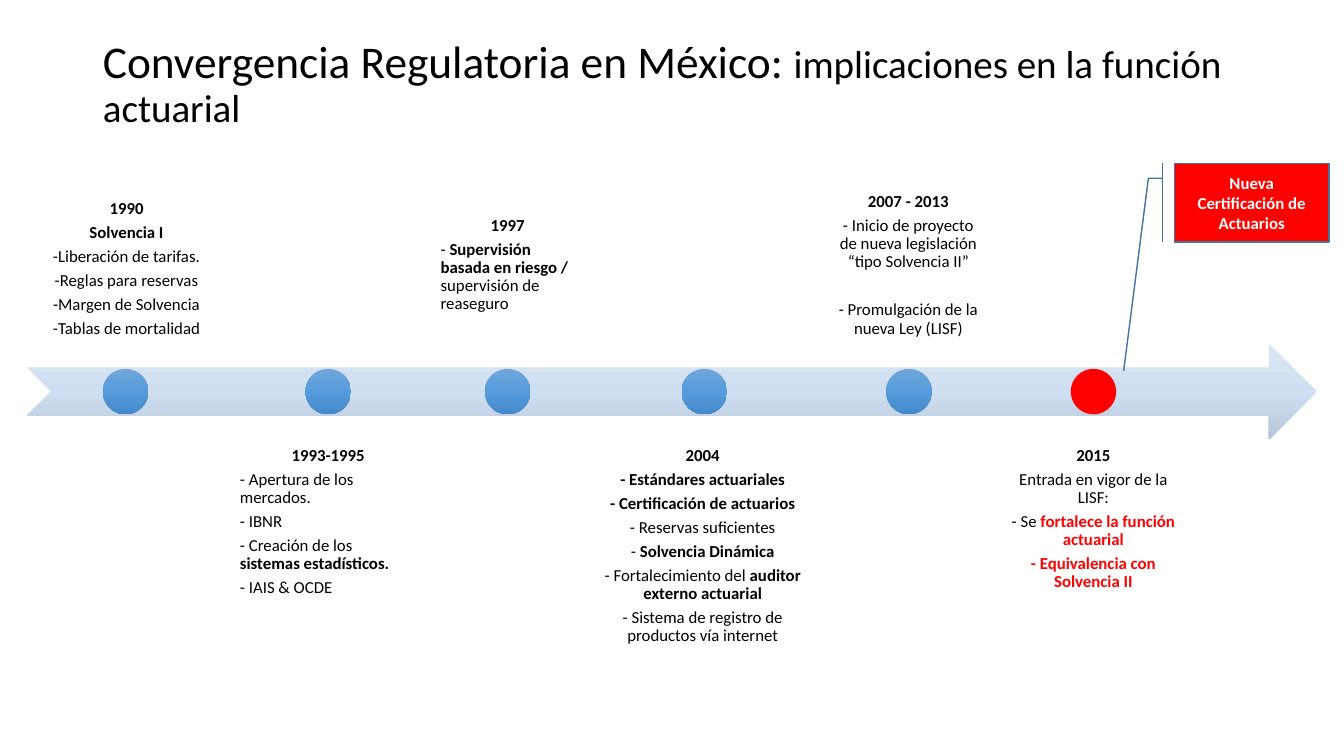
"""Build a timeline slide on regulatory convergence in Mexico."""
from copy import deepcopy
from typing import NamedTuple

from pptx import Presentation
from pptx.dml.color import RGBColor
from pptx.enum import shapes, text
from pptx.util import Inches, Pt

BLACK, WHITE, RED = "000000", "FFFFFF", "FF0000"
BAND = ("DBE5F3", "D0DEF1", "B6C5D9")
BLUE = ("71A6DB", "559BDB", "448ACA")
MID, LEFT = text.PP_ALIGN.CENTER, text.PP_ALIGN.LEFT
KIND = shapes.MSO_SHAPE


class Event(NamedTuple):
    left: float
    width: float
    dot: float
    above: bool
    year: str
    lines: tuple[str, ...]
    align: text.PP_ALIGN = MID
    fill: tuple[str, ...] = BLUE
    accent: str = BLACK
    base: float = 0.09
    gap: float = 0


EVENTS = (
    Event(0.28, 1.95, 1.02, True, "1990",
          ("|Solvencia I", "-Liberación de tarifas.", "-Reglas para reservas",
           "-Margen de Solvencia", "-Tablas de mortalidad")),
    Event(2.29, 1.93, 3.03, False, "1993-1995",
          ("- Apertura de los mercados.", "- IBNR",
           "- Creación de los |sistemas estadísticos.", "- IAIS & OCDE"), LEFT),
    Event(4.28, 1.51, 4.81, True, "1997",
          ("- |Supervisión basada en riesgo / |supervisión de reaseguro",),
          LEFT, base=0.33),
    Event(5.84, 2.26, 6.76, False, "2004",
          ("|- Estándares actuariales", "|- Certificación de actuarios",
           "- Reservas suficientes", "- |Solvencia Dinámica",
           "- Fortalecimiento del |auditor externo actuarial",
           "- Sistema de registro de productos vía internet")),
    Event(8.18, 1.66, 8.79, True, "2007 - 2013",
          ("- Inicio de proyecto de nueva legislación “tipo Solvencia II”",
           "- Promulgación de la nueva Ley (LISF)"), gap=17.2),
    Event(9.91, 1.87, 10.62, False, "2015",
          ("Entrada en vigor de la LISF:", "- Se |fortalece la función actuarial",
           "|- Equivalencia con Solvencia II"), fill=(RED,), accent=RED),
)


def tint(target, code: str) -> None:
    """Give a colour format a hex colour."""
    target.rgb = RGBColor.from_string(code)


def write(para, words: str, size: float, code: str, bold: bool = False) -> None:
    """Add one formatted run to a paragraph."""
    run = para.add_run()
    run.text = words
    run.font.name, run.font.size, run.font.bold = "Calibri", Pt(size), bold
    tint(run.font.color, code)


def paint(shape, codes: tuple[str, ...]) -> None:
    """Fill a shape with one colour or an even downward gradient."""
    shape.shadow.inherit = False
    if len(codes) == 1:
        shape.fill.solid()
        tint(shape.fill.fore_color, codes[0])
        return
    shape.fill.gradient()
    shape.fill.gradient_angle = 270
    stops = shape._element.spPr.find(".//{*}gsLst")
    stops.append(deepcopy(stops[-1]))
    for i, stop in enumerate(shape.fill.gradient_stops):
        stop.position = i / (len(codes) - 1)
        tint(stop.color, codes[i])


def draw(slide, kind, box: tuple[float, ...], codes: tuple[str, ...]):
    """Add a filled shape without outline."""
    shape = slide.shapes.add_shape(kind, *map(Inches, box))
    paint(shape, codes)
    shape.line.fill.background()
    return shape


def label(slide, event: Event) -> None:
    """Write an event's year and lines, with bold parts after each bar."""
    top = 1.62 if event.above else 4.34
    box = slide.shapes.add_textbox(
        *map(Inches, (event.left, top, event.width, 1.82)))
    frame = box.text_frame
    frame.word_wrap = True
    frame.vertical_anchor = (
        text.MSO_ANCHOR.BOTTOM if event.above else text.MSO_ANCHOR.TOP)
    frame.margin_left = frame.margin_right = frame.margin_top = Inches(0.09)
    frame.margin_bottom = Inches(event.base)
    for i, line in enumerate(("|" + event.year, *event.lines)):
        para = frame.add_paragraph() if i else frame.paragraphs[0]
        para.alignment = event.align if i else MID
        para.line_spacing, para.space_after = 0.9, Pt(4.2)
        if event.gap and i == len(event.lines):
            para.space_before = Pt(event.gap)
        for j, part in enumerate(line.split("|")):
            bold = j % 2 == 1
            if part:
                write(para, part, 12, event.accent if bold and i else BLACK, bold)


def head(slide) -> None:
    """Place and write the slide title."""
    title = slide.shapes.title
    title.left, title.top, title.width, title.height = map(
        Inches, (0.92, 0.3, 11.5, 1.09))
    frame = title.text_frame
    frame.word_wrap = True
    frame.auto_size = text.MSO_AUTO_SIZE.NONE
    frame.vertical_anchor = text.MSO_ANCHOR.MIDDLE
    para = frame.paragraphs[0]
    para.alignment, para.line_spacing = LEFT, 0.9
    write(para, "Convergencia Regulatoria en México: ", 32.4, BLACK)
    write(para, "implicaciones en la función actuarial", 27.9, BLACK)


def callout(slide) -> None:
    """Add the red callout that points at the last event."""
    note = draw(slide, KIND.LINE_CALLOUT_2_BORDER_AND_ACCENT_BAR,
                (11.65, 1.62, 1.53, 0.78), (RED,))
    for i, value in enumerate((0.19, -0.08, 0.19, -0.17, 2.64, -0.33)):
        note.adjustments[i] = value
    note.line.width = Pt(1)
    note.line.fill.solid()
    tint(note.line.color, "43739E")
    frame = note.text_frame
    frame.word_wrap = True
    frame.vertical_anchor = text.MSO_ANCHOR.MIDDLE
    frame.paragraphs[0].alignment = MID
    write(frame.paragraphs[0], "Nueva Certificación de Actuarios", 12, WHITE, True)


def main() -> None:
    """Build and save the slide."""
    deck = Presentation()
    deck.slide_width, deck.slide_height = Inches(13.33), Inches(7.5)
    slide = deck.slides.add_slide(deck.slide_layouts[5])
    head(slide)
    draw(slide, KIND.NOTCHED_RIGHT_ARROW, (0.27, 3.41, 12.79, 0.95), BAND)
    for event in EVENTS:
        label(slide, event)
        draw(slide, KIND.OVAL, (event.dot, 3.66, 0.45, 0.45), event.fill)
    callout(slide)
    deck.save("out.pptx")


if __name__ == "__main__":
    main()
